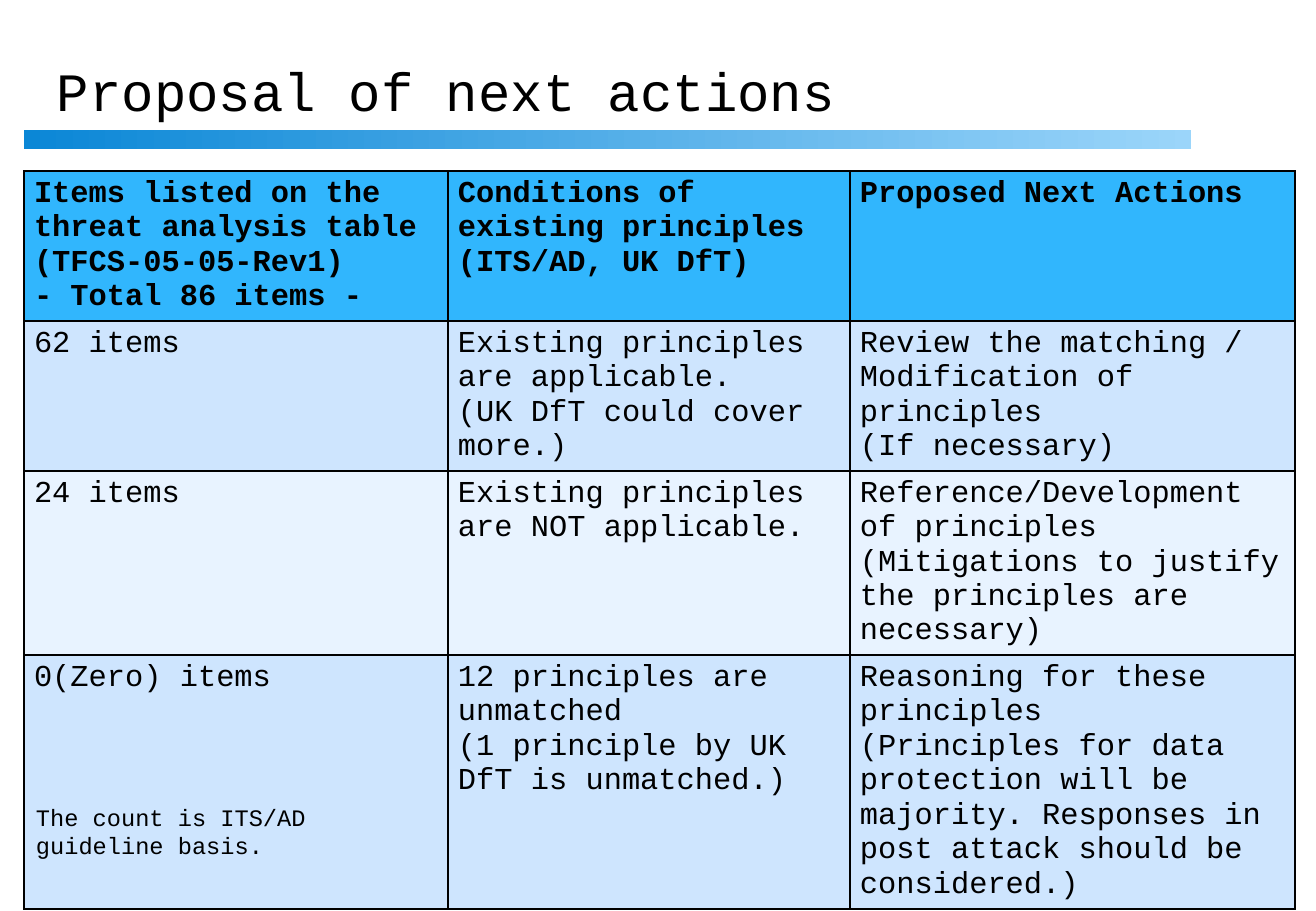
import pptx
import pptx.dml.color
import pptx.enum.shapes
import pptx.enum.text
import pptx.oxml
import pptx.oxml.ns
import pptx.util

RGB = pptx.dml.color.RGBColor
BLACK = RGB(0, 0, 0)
HEAD = RGB(0x31, 0xB6, 0xFD)
BANDS = (RGB(0xE8, 0xF3, 0xFF), RGB(0xCE, 0xE5, 0xFE))
DEEP = RGB(0x0B, 0x87, 0xD6)
PALE = RGB(0x9B, 0xD5, 0xFA)
FONT = "Courier New"
SCALE = 914400 / 121.5

WIDTHS = (424, 402, 445)
HEIGHTS = (150, 150, 184, 254)
ROWS = (
    ("Items listed on the threat analysis table\n(TFCS-05-05-Rev1)\n- Total 86 items -",
     "Conditions of existing principles (ITS/AD, UK DfT)",
     "Proposed Next Actions"),
    ("62 items",
     "Existing principles are applicable.\n(UK DfT could cover more.)",
     "Review the matching / Modification of principles\n(If necessary)"),
    ("24 items",
     "Existing principles are NOT applicable.",
     "Reference/Development of principles\n"
     "(Mitigations to justify the principles are necessary)"),
    ("0(Zero) items",
     "12 principles are unmatched\n(1 principle by UK DfT is unmatched.)",
     "Reasoning for these principles\n(Principles for data protection will be majority. "
     "Responses in post attack should be considered.)"),
)


def px(count):
    return pptx.util.Emu(round(count * SCALE))


def write(frame, text, size, bold=False):
    """Fill a text frame, one paragraph a line, in the slide's font."""
    frame.word_wrap = True
    frame.text = text
    for par in frame.paragraphs:
        par.font.name = FONT
        par.font.size = pptx.util.Pt(size)
        par.font.bold = bold
        par.font.color.rgb = BLACK


def add_text(slide, box, text, size):
    frame = slide.shapes.add_textbox(*map(px, box)).text_frame
    write(frame, text, size)
    return frame


def add_bar(slide, box):
    """Draw the title's rule, fading from left to right."""
    bar = slide.shapes.add_shape(pptx.enum.shapes.MSO_SHAPE.RECTANGLE, *map(px, box))
    bar.shadow.inherit = False
    bar.line.fill.background()
    bar.fill.gradient()
    bar.fill.gradient_angle = 0
    for stop, color in zip(bar.fill.gradient_stops, (DEEP, PALE)):
        stop.color.rgb = color


def add_edges(cell):
    """Put a black one-point line on each side of a cell."""
    props = cell._tc.get_or_add_tcPr()
    for spot, side in enumerate("LRTB"):
        edge = pptx.oxml.parse_xml(
            f'<a:ln{side} {pptx.oxml.ns.nsdecls("a")} w="12700"><a:solidFill>'
            f'<a:srgbClr val="{BLACK}"/></a:solidFill></a:ln{side}>')
        props.insert(spot, edge)


def add_grid(slide, left, top):
    box = map(px, (left, top, sum(WIDTHS), sum(HEIGHTS)))
    grid = slide.shapes.add_table(len(HEIGHTS), len(WIDTHS), *box).table
    for col, width in zip(grid.columns, WIDTHS):
        col.width = px(width)
    for num, (row, height, texts) in enumerate(zip(grid.rows, HEIGHTS, ROWS)):
        row.height = px(height)
        for cell, text in zip(row.cells, texts):
            cell.margin_left = cell.margin_right = px(10)
            cell.margin_top = cell.margin_bottom = px(6)
            cell.fill.solid()
            cell.fill.fore_color.rgb = BANDS[num % 2] if num else HEAD
            write(cell.text_frame, text, 18, bold=num == 0)
            add_edges(cell)


def main():
    deck = pptx.Presentation()
    deck.slide_width, deck.slide_height = px(1316), px(911)
    slide = deck.slides.add_slide(deck.slide_layouts[6])
    add_grid(slide, 24, 171)
    title = add_text(slide, (45, 49, 1249, 91), "Proposal of next actions", 32)
    title.vertical_anchor = pptx.enum.text.MSO_ANCHOR.MIDDLE
    title.paragraphs[0].line_spacing = 0.9
    add_bar(slide, (24, 130, 1167, 19))
    add_text(slide, (24, 797, 423, 41), "The count is ITS/AD guideline basis.", 14)
    deck.save("out.pptx")


if __name__ == "__main__":
    main()
